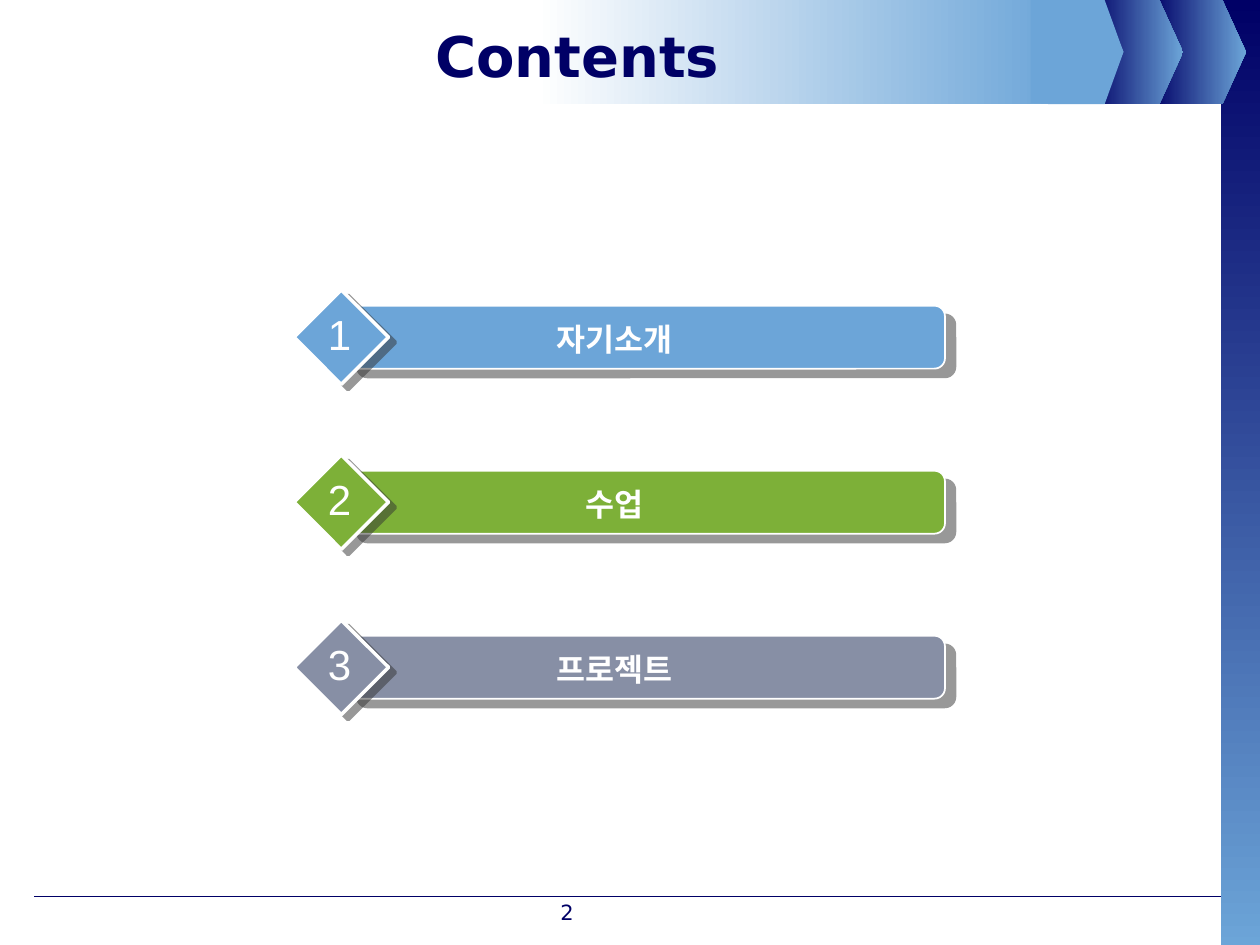
"""Builds the contents slide with three numbered sections."""
from dataclasses import dataclass

from lxml import etree
from pptx import Presentation
from pptx import util as u
from pptx.dml.color import RGBColor
from pptx.enum import shapes, text
from pptx.oxml.ns import qn


@dataclass(frozen=True)
class Theme:
    navy: str = "000066"
    sky: str = "6CA5D8"
    green: str = "7DB038"
    slate: str = "878FA5"
    white: str = "FFFFFF"
    shade: str = "333333"
    heading_font: str = "DejaVu Sans"
    body_font: str = "Arial"
    title_size: float = 32
    number_size: float = 24
    label_size: float = 18
    page_size: float = 12


class Deck:
    def __init__(self, theme, slide):
        self.theme = theme
        self.slide = slide

    def box(self, kind, place, fill, parent=None, border=None, corner=None, shadow=None):
        shape = (parent or self.slide).shapes.add_shape(kind, *map(u.Pt, place))
        shape.shadow.inherit = False
        if corner is not None:
            shape.adjustments[0] = corner
        shape.fill.solid()
        shape.fill.fore_color.rgb = RGBColor.from_string(fill)
        if border:
            shape.line.color.rgb = RGBColor.from_string(self.theme.white)
            shape.line.width = u.Pt(border)
        else:
            shape.line.fill.background()
        if shadow:
            self.cast_shadow(shape, *shadow)
        return shape

    def gradient_box(self, kind, place, colors, angle=0, corner=None):
        shape = self.box(kind, place, colors[0], corner=corner)
        shape.fill.gradient()
        shape.fill.gradient_angle = angle
        for stop, color in zip(shape.fill.gradient_stops, colors):
            stop.color.rgb = RGBColor.from_string(color)

    def cast_shadow(self, shape, distance, direction):
        effects = shape.element.spPr.find(qn("a:effectLst"))
        outer = etree.SubElement(effects, qn("a:outerShdw"), {
            "blurRad": "0", "dist": str(u.Pt(distance)),
            "dir": str(direction * 60000), "algn": "ctr", "rotWithShape": "0"})
        color = etree.SubElement(outer, qn("a:srgbClr"), val=self.theme.shade)
        etree.SubElement(color, qn("a:alpha"), val="50000")

    def rule(self, start, end):
        line = self.slide.shapes.add_connector(
            shapes.MSO_CONNECTOR.STRAIGHT, *map(u.Pt, start + end))
        line.line.color.rgb = RGBColor.from_string(self.theme.navy)
        line.line.width = u.Pt(0.75)
        etree.SubElement(line.element.spPr, qn("a:effectLst"))

    def set_words(self, frame, words, color, font_format):
        frame.text = words
        paragraph = frame.paragraphs[0]
        paragraph.alignment = text.PP_ALIGN.CENTER
        font = paragraph.runs[0].font
        font.color.rgb = RGBColor.from_string(color)
        for name, value in font_format.items():
            setattr(font, name, value)

    def caption(self, place, words, color, parent=None, wrap=True, grow=False, **font_format):
        caption = (parent or self.slide).shapes.add_textbox(*map(u.Pt, place))
        caption.text_frame.word_wrap = wrap
        if grow:
            caption.text_frame.auto_size = text.MSO_AUTO_SIZE.SHAPE_TO_FIT_TEXT
        self.set_words(caption.text_frame, words, color, font_format)

    def title(self, place, words):
        heading = self.slide.shapes.title
        for name, value in zip(("left", "top", "width", "height"), place):
            setattr(heading, name, u.Pt(value))
        heading.element.getparent().append(heading.element)
        frame = heading.text_frame
        frame.auto_size = text.MSO_AUTO_SIZE.NONE
        frame.vertical_anchor = text.MSO_ANCHOR.MIDDLE
        self.set_words(frame, words, self.theme.navy, {
            "bold": True, "name": self.theme.heading_font,
            "size": u.Pt(self.theme.title_size)})

    def section(self, top, number, label, color):
        theme, kinds = self.theme, shapes.MSO_SHAPE
        group = self.slide.shapes.add_group_shape()
        self.box(kinds.ROUNDED_RECTANGLE, (198, top + 9, 342, 36), color, group,
                 border=1, corner=0.167, shadow=(7.8, 40))
        self.box(kinds.DIAMOND, (168, top, 54, 54), color, group,
                 border=2, shadow=(5, 37))
        self.caption((216, top + 13.5, 270, 29), label, theme.white, group, grow=True,
                     bold=True, name=theme.body_font, size=u.Pt(theme.label_size))
        self.caption((180, top + 7.2, 28, 36), str(number), theme.white, group,
                     wrap=False, grow=True,
                     name=theme.body_font, size=u.Pt(theme.number_size))


def main():
    theme, kinds = Theme(), shapes.MSO_SHAPE
    presentation = Presentation()
    presentation.slide_width, presentation.slide_height = u.Pt(720), u.Pt(540)
    deck = Deck(theme, presentation.slides.add_slide(presentation.slide_layouts[5]))

    deck.rule((19.5, 512.5), (697.5, 512.5))
    deck.gradient_box(kinds.RECTANGLE, (697.5, 0, 22.5, 542), (theme.navy, theme.sky), 270)
    for left in (658, 622):
        deck.gradient_box(kinds.PENTAGON, (left, 0, 54, 59.5),
                          (theme.navy, theme.sky), corner=0.25)
    deck.box(kinds.PENTAGON, (599, 0, 43, 59.5), theme.sky, corner=0.25)
    deck.gradient_box(kinds.RECTANGLE, (306, 0, 301, 59.5), (theme.white, theme.sky))
    deck.box(kinds.PENTAGON, (589, 0, 53, 59), theme.sky, corner=0.25)
    deck.title((36, 9.5, 588, 44.5), "Contents")

    sections = (("자기소개", theme.sky), ("수업", theme.green), ("프로젝트", theme.slate))
    for index, (label, color) in enumerate(sections):
        deck.section(165.7 + index * 94.3, index + 1, label, color)
    deck.caption((240, 510.5, 168, 19), "2", theme.navy,
                 name=theme.heading_font, size=u.Pt(theme.page_size))
    presentation.save("out.pptx")


if __name__ == "__main__":
    main()
